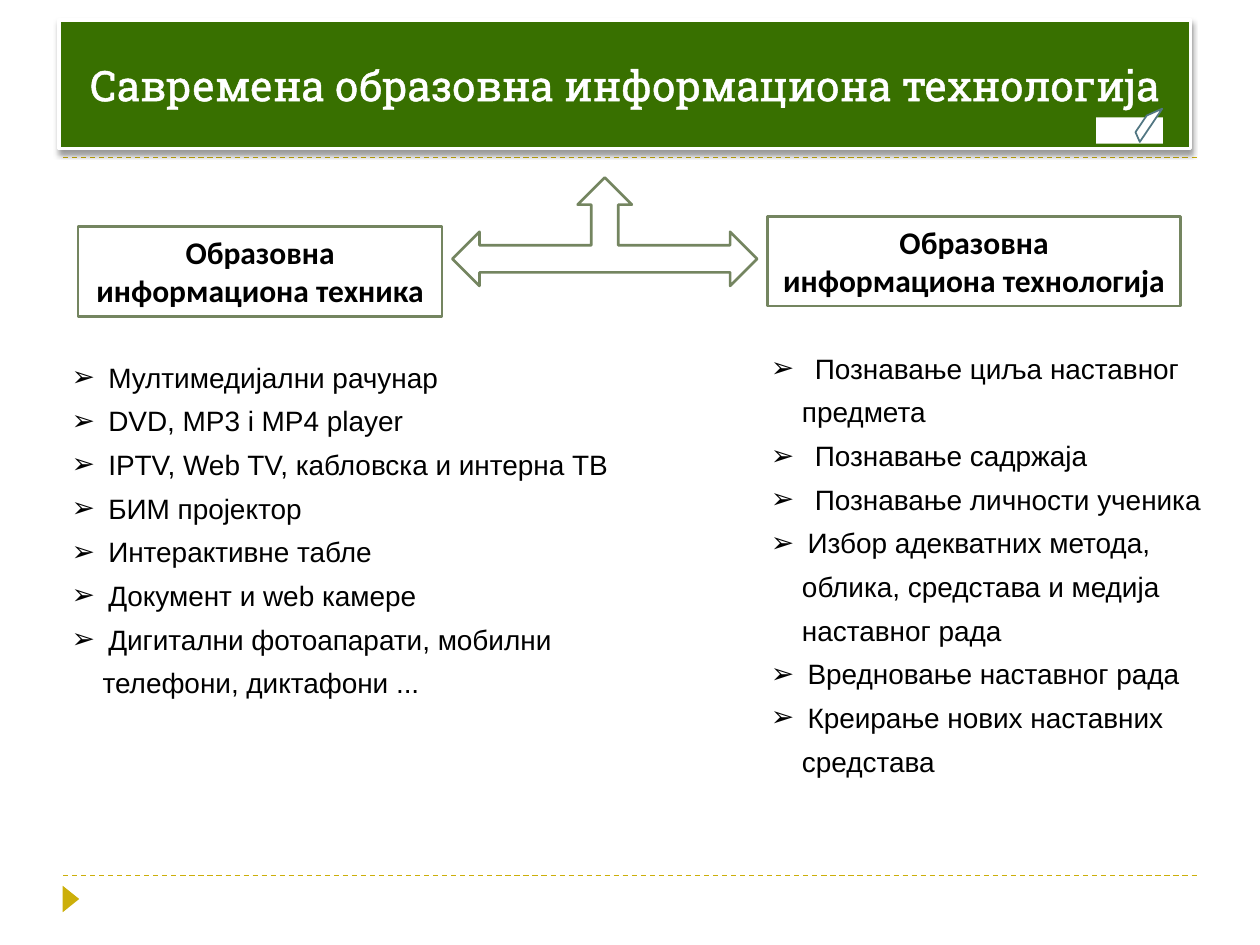
from lxml import etree
from pptx import Presentation
from pptx.dml.color import RGBColor
from pptx.enum.dml import MSO_LINE_DASH_STYLE as Dash
from pptx.enum.shapes import MSO_CONNECTOR as Connector, MSO_SHAPE as Shape
from pptx.enum.text import MSO_ANCHOR as Anchor, PP_ALIGN as Align
from pptx.oxml import parse_xml
from pptx.oxml.ns import nsdecls, qn
from pptx.util import Pt


class Theme:
    WHITE, BLACK = "FFFFFF", "000000"
    GREEN, SAGE, GOLD, TEAL = "387000", "748560", "CCAF0A", "517682"
    TITLE_FONT, LABEL_FONT, LIST_FONT = "Roboto Slab", "Calibri", "Arial"
    TITLE_SIZE, LABEL_SIZE, LIST_SIZE = 24, 18, 16


TITLE = "Савремена образовна информациона технологија"
RULE_HEIGHTS = (90, 500.4)
LABELS = [
    ((44.6, 129.6, 208.1, 51.1), ["Образовна информациона техника"]),
    ((438.5, 123.8, 236.2, 51.1), ["Образовна", "информациона технологија"]),
]

# Text indents of a list line, in points
ITEM, DEEP_ITEM, CONTINUED = 21, 25.2, 17.8
LISTS = [
    ((33.8, 196.6, 337.7, 208.8), [
        (ITEM, "Мултимедијални рачунар"),
        (ITEM, "DVD, MP3 i MP4 player"),
        (ITEM, "IPTV, Web TV, кабловска и интерна ТВ"),
        (ITEM, "БИМ пројектор"),
        (ITEM, "Интерактивне табле"),
        (ITEM, "Документ и web камере"),
        (ITEM, "Дигитални фотоапарати, мобилни"),
        (CONTINUED, "телефони, диктафони ..."),
    ]),
    ((433.4, 191.5, 270, 259.2), [
        (DEEP_ITEM, "Познавање циља наставног"),
        (CONTINUED, "предмета"),
        (DEEP_ITEM, "Познавање садржаја"),
        (DEEP_ITEM, "Познавање личности ученика"),
        (ITEM, "Избор адекватних метода,"),
        (CONTINUED, "облика, средстава и медија"),
        (CONTINUED, "наставног рада"),
        (ITEM, "Вредновање наставног рада"),
        (ITEM, "Креирање нових наставних"),
        (CONTINUED, "средстава"),
    ]),
]


def color(code):
    return RGBColor.from_string(code)


def add_box(page, kind, place, fill, line=None, width=1):
    box = page.shapes.add_shape(kind, *map(Pt, place))
    box.shadow.inherit = False
    box.fill.solid()
    box.fill.fore_color.rgb = color(fill)
    if line:
        box.line.color.rgb = color(line)
        box.line.width = Pt(width)
    else:
        box.line.fill.background()
    return box


def add_rule(page, height):
    rule = page.shapes.add_connector(
        Connector.STRAIGHT, Pt(36), Pt(height), Pt(684), Pt(height))
    rule.line.color.rgb = color(Theme.GOLD)
    rule.line.width = Pt(0.75)
    rule.line.dash_style = Dash.DASH
    etree.SubElement(rule._element.spPr, qn("a:effectLst"))


def write(box, lines, font, size, ink=Theme.BLACK, bold=False,
          align=Align.LEFT, anchor=Anchor.TOP, spacing=1):
    """Put one paragraph per line into the box and return the paragraphs."""
    frame = box.text_frame
    frame.word_wrap = True
    frame.vertical_anchor = anchor
    for number, line in enumerate(lines):
        para = frame.add_paragraph() if number else frame.paragraphs[0]
        para.alignment, para.line_spacing = align, spacing
        span = para.add_run()
        span.text = line
        span.font.name, span.font.size = font, Pt(size)
        span.font.bold, span.font.color.rgb = bold, color(ink)
    return frame.paragraphs


def indent(para, margin):
    """Indent a list line; every line but a continued one gets a bullet."""
    props = para._p.get_or_add_pPr()
    props.set("marL", str(Pt(margin)))
    if margin == CONTINUED:
        props.set("indent", "0")
        return
    props.set("indent", str(-Pt(margin)))
    etree.SubElement(props, qn("a:buFont"), typeface="Wingdings")
    props[-1].set("typeface", Theme.LIST_FONT)
    etree.SubElement(props, qn("a:buChar"), char="➢")


def add_title(page):
    banner = add_box(page, Shape.RECTANGLE, (33.8, 11.5, 646.6, 73.4),
                     Theme.GREEN, Theme.WHITE, 2)
    effects = banner._element.spPr.find(qn("a:effectLst"))
    effects.append(parse_xml(
        f'<a:outerShdw {nsdecls("a")} blurRad="{Pt(3)}" dist="{Pt(2)}" '
        f'dir="5400000" rotWithShape="0"><a:srgbClr val="{Theme.BLACK}">'
        '<a:alpha val="40000"/></a:srgbClr></a:outerShdw>'))
    para = write(banner, [TITLE], Theme.TITLE_FONT, Theme.TITLE_SIZE,
                 ink=Theme.WHITE, align=Align.CENTER, anchor=Anchor.MIDDLE)[0]
    para.runs[0]._r.get_or_add_rPr().insert(0, parse_xml(
        f'<a:ln {nsdecls("a")} w="{Pt(1.45)}"><a:solidFill>'
        f'<a:srgbClr val="{Theme.WHITE}"/></a:solidFill></a:ln>'))


def add_note_icon(page):
    add_box(page, Shape.RECTANGLE, (626.4, 67, 38.2, 15.1), Theme.WHITE)
    pen = add_box(page, Shape.DIAGONAL_STRIPE, (651.6, 61.9, 12.2, 19.4),
                  Theme.WHITE, Theme.TEAL)
    pen.rotation = 246.2
    pen._element.spPr.find(qn("a:xfrm")).set("flipH", "1")


def main():
    deck = Presentation()
    deck.slide_width, deck.slide_height = Pt(720), Pt(540)
    page = deck.slides.add_slide(deck.slide_layouts[6])

    for height in RULE_HEIGHTS:
        add_rule(page, height)
    marker = add_box(page, Shape.ISOSCELES_TRIANGLE, (33, 509, 15.1, 9.4),
                     Theme.GOLD)
    marker.rotation = 90
    add_title(page)
    add_note_icon(page)

    add_box(page, Shape.LEFT_RIGHT_UP_ARROW, (258.5, 101.5, 174.2, 61.9),
            Theme.WHITE, Theme.SAGE, 1.5)
    for place, lines in LABELS:
        label = add_box(page, Shape.RECTANGLE, place,
                        Theme.WHITE, Theme.SAGE, 1.5)
        write(label, lines, Theme.LABEL_FONT, Theme.LABEL_SIZE,
              bold=True, align=Align.CENTER)
    for place, items in LISTS:
        box = page.shapes.add_textbox(*map(Pt, place))
        paras = write(box, [text for _, text in items],
                      Theme.LIST_FONT, Theme.LIST_SIZE, spacing=1.3)
        for para, (margin, _) in zip(paras, items):
            indent(para, margin)

    deck.save("out.pptx")


if __name__ == "__main__":
    main()
